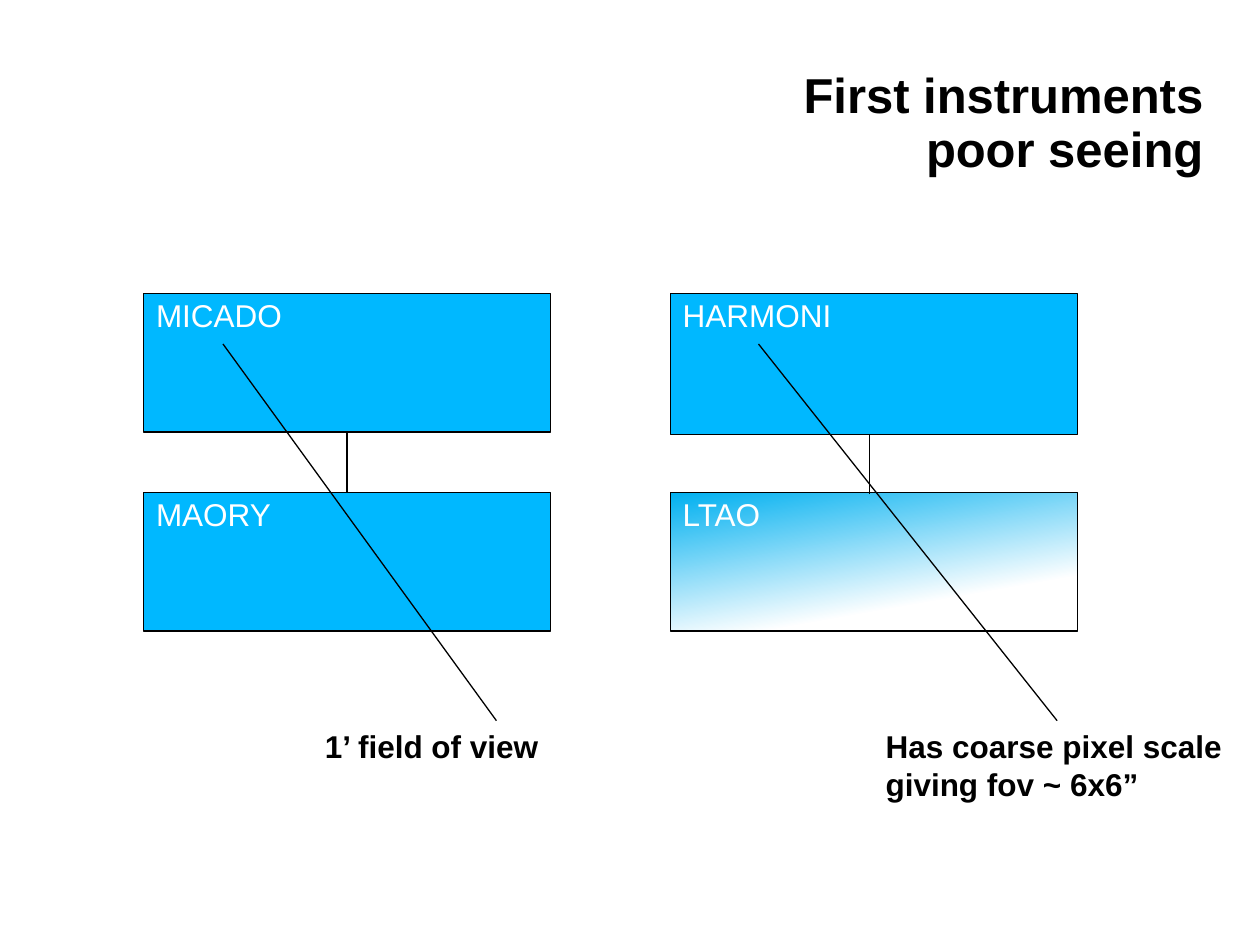
"""Build a slide pairing two first instruments with their adaptive optics modules."""
from dataclasses import dataclass

from lxml import etree
from pptx import Presentation
from pptx import util as u
from pptx.dml.color import RGBColor
from pptx.enum import shapes, text
from pptx.oxml.ns import qn

COLORS = {"ink": "000000", "paper": "FFFFFF", "block": "00B8FF", "fade": "00B0F0"}
FONT = "Arial"
WIDTH, HEIGHT = 10, 7.5
COLUMNS = (1.14, 5.32)
ROWS = (2.33, 3.91)
BLOCK_WIDTH, BLOCK_HEIGHT = 3.23, 1.1
POINTER_TOP, NOTE_TOP, NOTE_WIDTH = 2.73, 5.72, 2.91
SPACING = 0.93


@dataclass(frozen=True)
class Block:
    label: str
    column: int
    row: int
    height: float = BLOCK_HEIGHT
    faded: bool = False


@dataclass(frozen=True)
class Note:
    lines: tuple[str, ...]
    left: float
    height: float
    pointer: tuple[float, float]


BLOCKS = (
    Block("MICADO", 0, 0),
    Block("MAORY", 0, 1),
    Block("HARMONI", 1, 0, height=1.12),
    Block("LTAO", 1, 1, faded=True),
)
NOTES = (
    Note(("1’ field of view",), 2.48, 0.4, (1.77, 3.94)),
    Note(("Has coarse pixel scale", "giving fov ~ 6x6”"), 6.93, 0.71, (6.02, 8.39)),
)


def color(name: str) -> RGBColor:
    """Look up a palette colour."""
    return RGBColor.from_string(COLORS[name])


def add_span(para, words: str, size: float, ink: str, bold: bool = False) -> None:
    """Append one formatted run to a paragraph."""
    span = para.add_run()
    span.text = words
    span.font.name, span.font.size, span.font.bold = FONT, u.Pt(size), bold
    span.font.color.rgb = color(ink)


def set_title(slide, lines: tuple[str, ...]) -> None:
    """Place the title placeholder and write its right-aligned lines."""
    title = slide.shapes.title
    title.left, title.top = u.Inches(COLUMNS[0]), u.Inches(0.5)
    title.width, title.height = u.Inches(8.51), u.Inches(1.12)
    frame = title.text_frame
    frame.word_wrap = True
    frame.auto_size = text.MSO_AUTO_SIZE.NONE
    frame.vertical_anchor = text.MSO_ANCHOR.TOP
    para = frame.paragraphs[0]
    para.alignment, para.line_spacing = text.PP_ALIGN.RIGHT, SPACING
    for index, line in enumerate(lines):
        if index:
            para.add_line_break()
        add_span(para, line, 28, "ink", True)


def add_block(slide, block: Block):
    """Draw one labelled rectangle on the grid."""
    box = slide.shapes.add_shape(
        shapes.MSO_SHAPE.RECTANGLE, u.Inches(COLUMNS[block.column]),
        u.Inches(ROWS[block.row]), u.Inches(BLOCK_WIDTH), u.Inches(block.height))
    box.shadow.inherit = False
    if block.faded:
        box.fill.gradient()
        box.fill.gradient_angle = 280
        stops = zip(box.fill.gradient_stops, (0, 0.74), ("fade", "paper"))
        for stop, position, name in stops:
            stop.position, stop.color.rgb = position, color(name)
    else:
        box.fill.solid()
        box.fill.fore_color.rgb = color("block")
    box.line.color.rgb, box.line.width = color("ink"), u.Pt(0.75)
    box.text_frame.vertical_anchor = text.MSO_ANCHOR.TOP
    para = box.text_frame.paragraphs[0]
    para.alignment, para.line_spacing = text.PP_ALIGN.LEFT, SPACING
    add_span(para, block.label, 18, "paper")
    return box


def add_line(slide, start: tuple[float, float], end: tuple[float, float]):
    """Draw a thin straight connector between two points."""
    line = slide.shapes.add_connector(
        shapes.MSO_CONNECTOR.STRAIGHT, *(u.Inches(value) for value in start + end))
    line.line.color.rgb, line.line.width = color("ink"), u.Pt(0.75)
    etree.SubElement(line._element.spPr, qn("a:effectLst"))
    return line


def add_note(slide, note: Note) -> None:
    """Write a bold remark below the blocks."""
    box = slide.shapes.add_textbox(
        u.Inches(note.left), u.Inches(NOTE_TOP), u.Inches(NOTE_WIDTH), u.Inches(note.height))
    frame = box.text_frame
    frame.word_wrap = True
    frame.auto_size = text.MSO_AUTO_SIZE.SHAPE_TO_FIT_TEXT
    for index, line in enumerate(note.lines):
        para = frame.add_paragraph() if index else frame.paragraphs[0]
        add_span(para, line, 18, "ink", True)


def main() -> None:
    """Assemble and save the deck."""
    deck = Presentation()
    deck.slide_width, deck.slide_height = u.Inches(WIDTH), u.Inches(HEIGHT)
    page = deck.slides.add_slide(deck.slide_layouts[5])
    set_title(page, ("First instruments", "poor seeing"))
    micado, maory, *_ = [add_block(page, block) for block in BLOCKS]
    stem = add_line(page, (2.75, 3.43), (2.75, ROWS[1]))
    stem.begin_connect(micado, 2)
    stem.end_connect(maory, 0)
    add_line(page, (6.9, 3.45), (6.9, 3.92))
    for note in NOTES:
        add_note(page, note)
    for note in NOTES:
        start, end = note.pointer
        add_line(page, (start, POINTER_TOP), (end, NOTE_TOP))
    deck.save("out.pptx")


if __name__ == "__main__":
    main()
